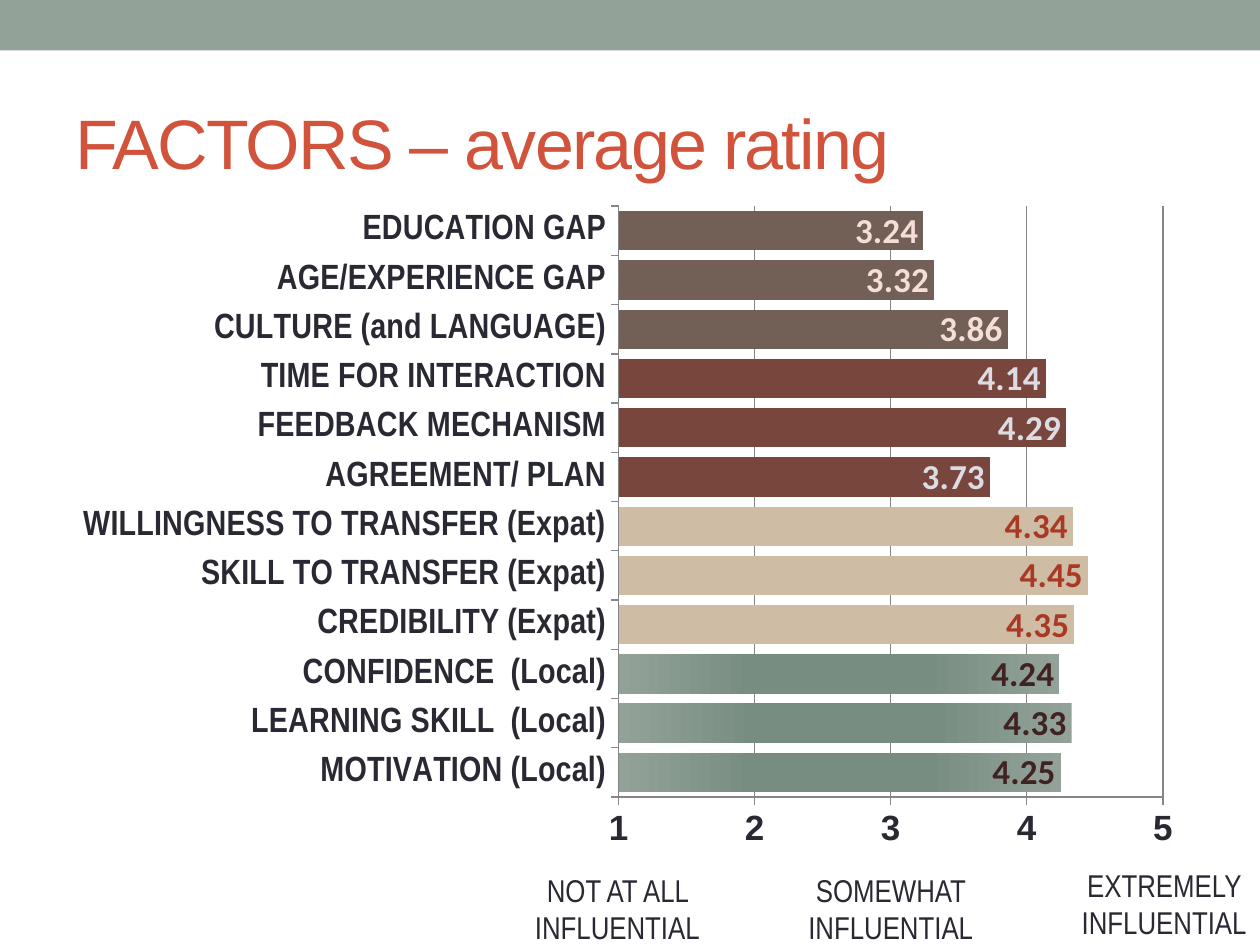
from pptx import Presentation
from pptx.chart.data import CategoryChartData
from pptx.dml.color import RGBColor
from pptx.enum.chart import XL_CHART_TYPE, XL_LABEL_POSITION, XL_TICK_MARK
from pptx.enum.shapes import MSO_SHAPE
from pptx.enum.text import MSO_ANCHOR, PP_ALIGN
from pptx.oxml import parse_xml
from pptx.oxml.ns import nsdecls
from pptx.util import Inches, Pt

BAR_CLUSTERED = XL_CHART_TYPE.BAR_CLUSTERED
INSIDE_END = XL_LABEL_POSITION.INSIDE_END
OUTSIDE = XL_TICK_MARK.OUTSIDE
RECTANGLE = MSO_SHAPE.RECTANGLE
MIDDLE = MSO_ANCHOR.MIDDLE
CENTER = PP_ALIGN.CENTER

SAGE = RGBColor(0x93, 0xA2, 0x99)
DARK_SAGE = RGBColor(0x78, 0x8D, 0x81)
TAN = RGBColor(0xCE, 0xBC, 0xA4)
MAROON = RGBColor(0x79, 0x46, 0x3D)
BROWN = RGBColor(0x72, 0x60, 0x56)
ORANGE = RGBColor(0xD2, 0x53, 0x3C)
INK = RGBColor(0x29, 0x29, 0x34)
GRAY = RGBColor(0x86, 0x86, 0x86)
DARK_RED = RGBColor(0x40, 0x22, 0x20)
RED = RGBColor(0xA9, 0x39, 0x25)
PALE_BLUE = RGBColor(0xDC, 0xDC, 0xE4)
PALE_PINK = RGBColor(0xF6, 0xDD, 0xD8)

GROUPS = [
    (SAGE, DARK_RED, [("MOTIVATION (Local)", 4.25),
                      ("LEARNING SKILL  (Local)", 4.33),
                      ("CONFIDENCE  (Local)", 4.24)]),
    (TAN, RED, [("CREDIBILITY (Expat)", 4.35),
                ("SKILL TO TRANSFER (Expat)", 4.45),
                ("WILLINGNESS TO TRANSFER (Expat)", 4.34)]),
    (MAROON, PALE_BLUE, [("AGREEMENT/ PLAN", 3.73),
                         ("FEEDBACK MECHANISM", 4.29),
                         ("TIME FOR INTERACTION", 4.14)]),
    (BROWN, PALE_PINK, [("CULTURE (and LANGUAGE)", 3.86),
                        ("AGE/EXPERIENCE GAP", 3.32),
                        ("EDUCATION GAP", 3.24)]),
]
SCALE_NOTES = [
    (4.14, 6.86, "NOT AT ALL INFLUENTIAL"),
    (6.31, 6.86, "SOMEWHAT INFLUENTIAL"),
    (8.48, 6.82, "EXTREMELY INFLUENTIAL"),
]


def set_font(font, name, size, color, bold=False):
    font.name = name
    font.size = Pt(size)
    font.bold = bold
    font.color.rgb = color


def add_text(page, left, top, width, height, text, name, size, color):
    box = page.shapes.add_textbox(Inches(left), Inches(top), Inches(width), Inches(height))
    box.text_frame.word_wrap = True
    box.text_frame.text = text
    para = box.text_frame.paragraphs[0]
    set_font(para.runs[0].font, name, size, color)
    return box.text_frame


deck = Presentation()
deck.slide_width = Inches(10)
deck.slide_height = Inches(7.5)
page = deck.slides.add_slide(deck.slide_layouts[6])

band = page.shapes.add_shape(RECTANGLE, 0, 0, Inches(10), Inches(0.4))
band.shadow.inherit = False
band.fill.solid()
band.fill.fore_color.rgb = SAGE
band.line.fill.background()

title = add_text(page, 0.5, 0.58, 9, 1.08, "FACTORS – average rating", "Arial", 40, ORANGE)
title.vertical_anchor = MIDDLE
title.paragraphs[0].runs[0].font._element.set("spc", "-100")

chart_data = CategoryChartData()
chart_data.categories = [name for _, _, rows in GROUPS for name, _ in rows]
chart_data.add_series("Series 1", [value for _, _, rows in GROUPS for _, value in rows])
chart = page.shapes.add_chart(
    BAR_CLUSTERED, Inches(0.5), Inches(1.53), Inches(9), Inches(5.33), chart_data).chart
chart.has_legend = False
chart.has_title = False
set_font(chart.font, "Arial", 10, INK)

for axis, font_name in ((chart.category_axis, "Arial Narrow"), (chart.value_axis, "Arial")):
    set_font(axis.tick_labels.font, font_name, 20, INK, True)
    axis.major_tick_mark = OUTSIDE
    axis.format.line.color.rgb = GRAY
chart.category_axis.has_major_gridlines = False
scale = chart.value_axis
scale.minimum_scale = 1
scale.maximum_scale = 5
scale.major_unit = 1
scale.has_major_gridlines = True
scale.major_gridlines.format.line.color.rgb = GRAY

plot = chart.plots[0]
plot.gap_width = 25
plot.vary_by_categories = False
plot.has_data_labels = True
plot.data_labels.show_value = True
series = plot.series[0]
series.format.fill.solid()
series.format.fill.fore_color.rgb = SAGE

for group_index, (bar_color, label_color, rows) in enumerate(GROUPS):
    for row_index in range(len(rows)):
        point = series.points[group_index * 3 + row_index]
        fill = point.format.fill
        if bar_color == SAGE:
            fill.gradient()
            fill.gradient_angle = 0
            stops = fill._xPr.gradFill.gsLst
            for stop in list(stops):
                stops.remove(stop)
            for position, color in ((0, SAGE), (30, DARK_SAGE), (70, DARK_SAGE), (100, SAGE)):
                stops.append(parse_xml(
                    f'<a:gs {nsdecls("a")} pos="{position * 1000}">'
                    f'<a:srgbClr val="{color}"/></a:gs>'))
        else:
            fill.solid()
            fill.fore_color.rgb = bar_color
        label = point.data_label
        set_font(label.font, "Calibri", 20, label_color, True)
        label.position = INSIDE_END

plot_area = chart._chartSpace.chart.plotArea
for old_layout in plot_area.findall("{*}layout"):
    plot_area.remove(old_layout)
measures = "".join(
    f'<c:{tag} val="{value}"/>' for tag, value in (
        ("layoutTarget", "inner"), ("xMode", "edge"), ("yMode", "edge"),
        ("x", 0.49), ("y", 0.02), ("w", 0.48), ("h", 0.88)))
plot_area.insert(0, parse_xml(
    f'<c:layout {nsdecls("c")}><c:manualLayout>{measures}</c:manualLayout></c:layout>'))

for left, top, text in SCALE_NOTES:
    note = add_text(page, left, top, 1.52, 0.71, text, "Arial Narrow", 18, INK)
    note.paragraphs[0].alignment = CENTER

deck.save("out.pptx")
